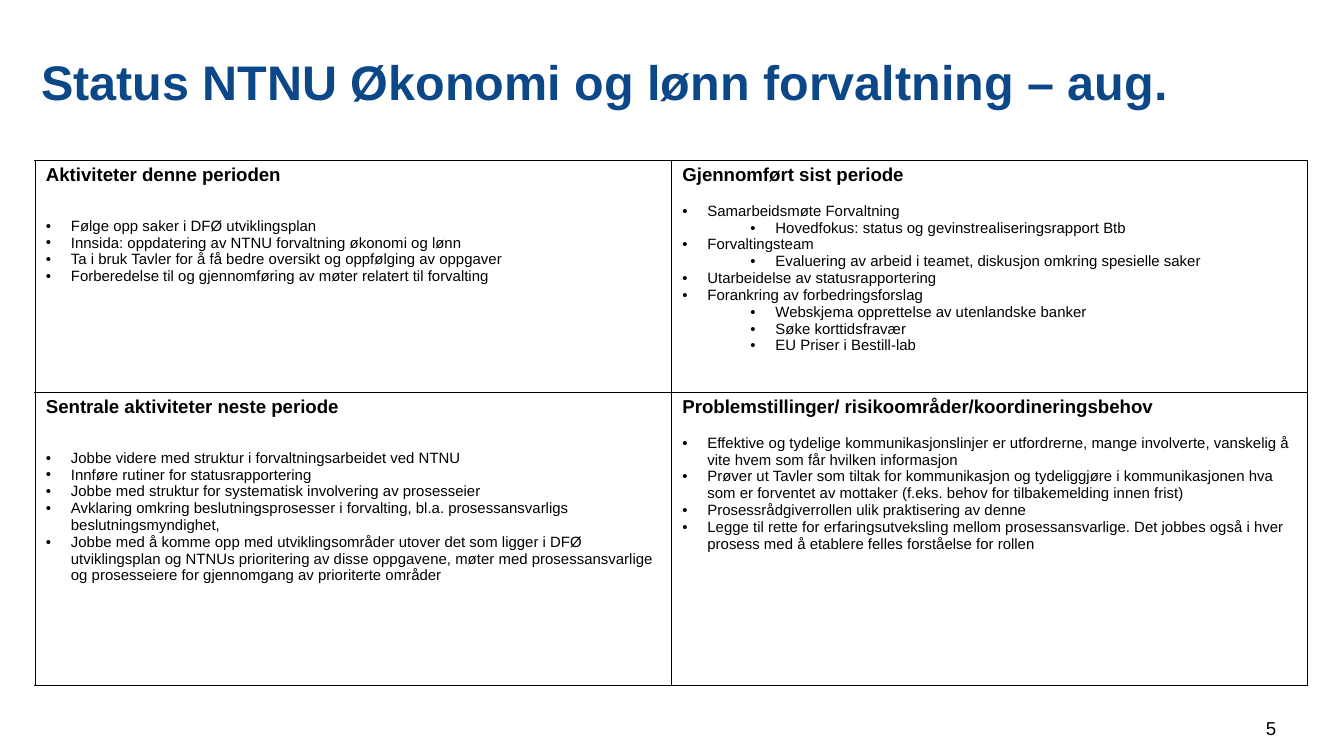
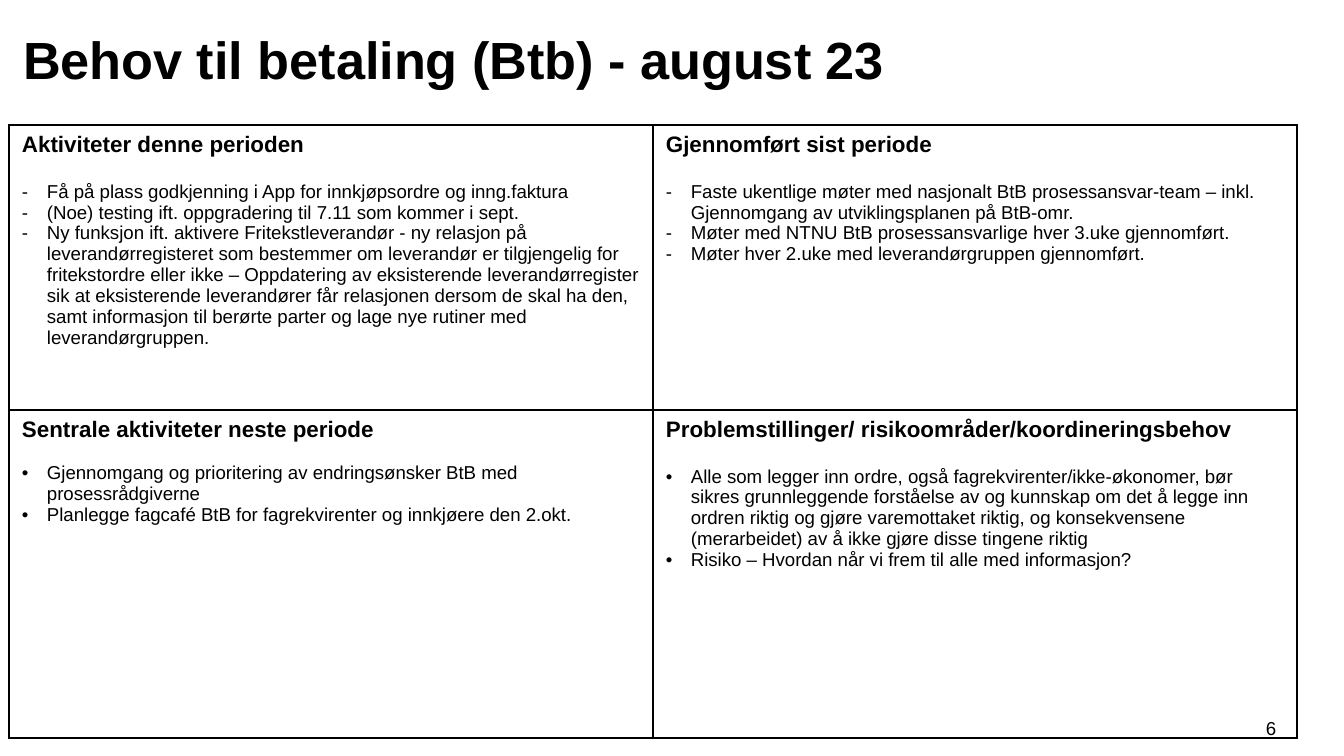
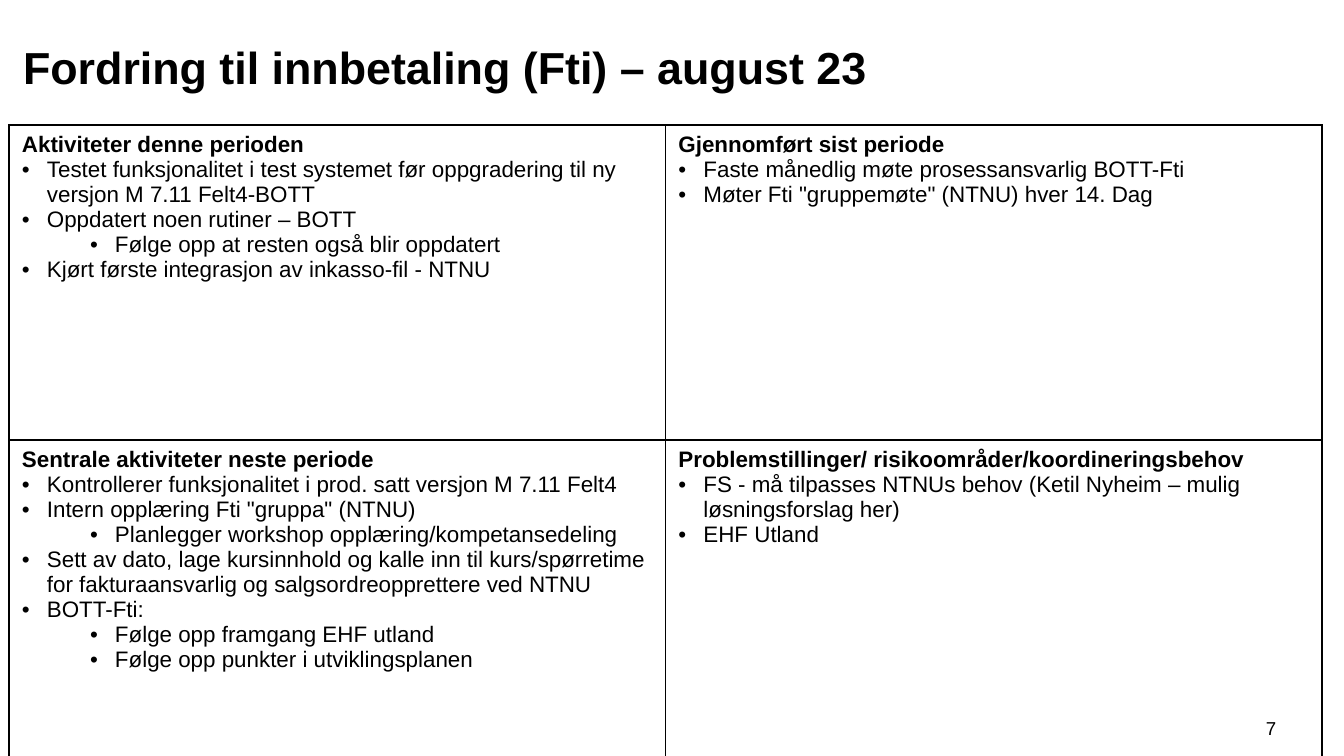
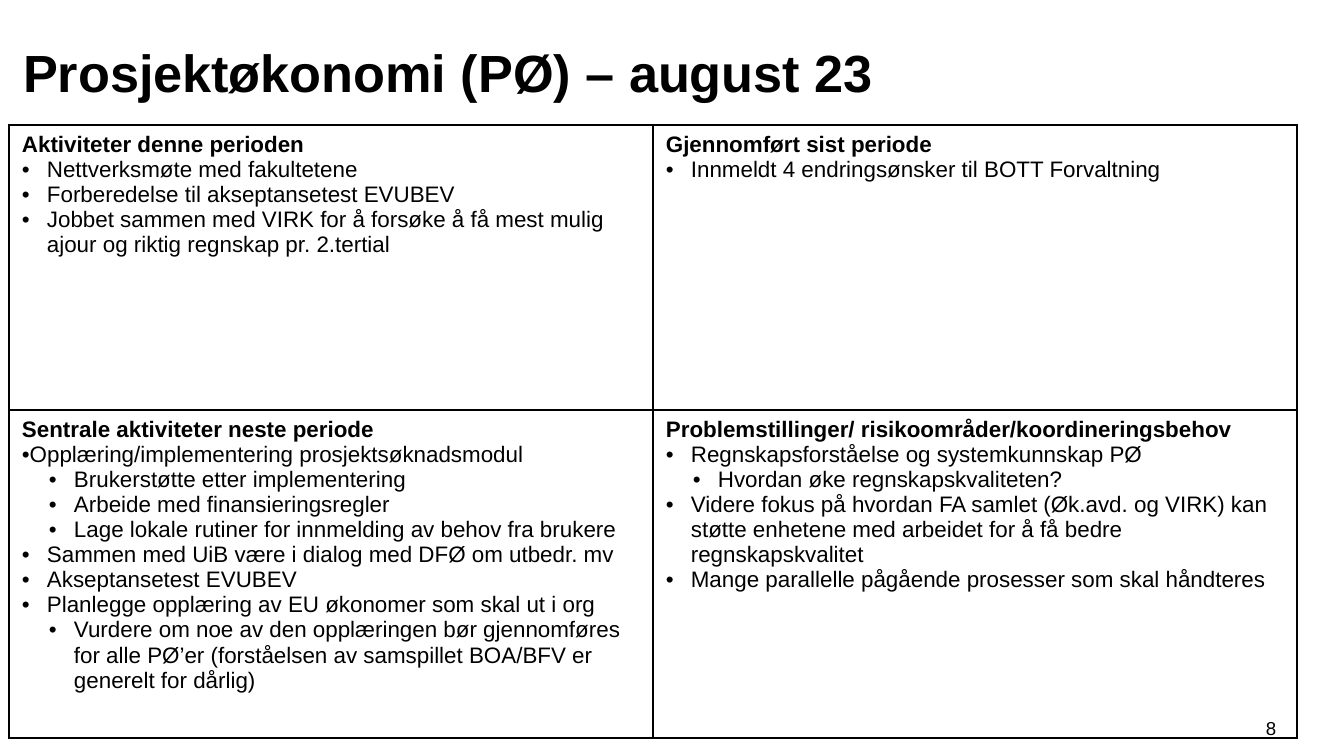
"""Build four monthly status slides, each a title over a two-by-two table."""
from lxml.etree import SubElement
from pptx import Presentation
from pptx.dml.color import RGBColor
from pptx.enum.text import MSO_ANCHOR, MSO_AUTO_SIZE, PP_ALIGN
from pptx.oxml.ns import qn
from pptx.util import Emu, Pt

FONT = "Arial"
BLACK = RGBColor(0x00, 0x00, 0x00)
BLUE = RGBColor(0x0C, 0x47, 0x88)
SLIDE_SIZE = (1344, 756)
NUMBER_BOX = (1246, 708, 50, 40)
FIRST_NUMBER = 5
TITLE_INSETS = (13, 9, 13, 7)
HANGING = 25
MAIN, SUB, FLUSH = "main", "sub", "flush"

HEADINGS = (
    "Aktiviteter denne perioden",
    "Gjennomført sist periode",
    "Sentrale aktiviteter neste periode",
    "Problemstillinger/ risikoområder/koordineringsbehov",
)

WIDE = {
    "title_color": BLACK, "title_spacing": 1.0, "border": 1.0, "insets": (13, 7),
    "heading_size": 12, "body_size": 12, "bullets": "••••",
    "gaps": (0, 0, 0, 0), "sub_indent": 93,
    "table": (9, 125, 1288), "rows": (285, 328),
}

SLIDES = (
    WIDE | {
        "title": "Status NTNU Økonomi og lønn forvaltning – aug.",
        "title_box": (28, 50, 1273, 91), "title_size": 26,
        "title_color": BLUE, "title_spacing": 0.9,
        "table": (35, 160, 1273), "rows": (232, 294),
        "border": 0.6, "insets": (11, 5),
        "heading_size": 10, "body_size": 8, "gaps": (17, 9, 17, 9),
        "cells": (
            (
                (MAIN, "Følge opp saker i DFØ utviklingsplan"),
                (MAIN, "Innsida: oppdatering av NTNU forvaltning økonomi og lønn"),
                (MAIN, "Ta i bruk Tavler for å få bedre oversikt og oppfølging av oppgaver"),
                (MAIN, "Forberedelse til og gjennomføring av møter relatert til forvalting"),
            ),
            (
                (MAIN, "Samarbeidsmøte Forvaltning"),
                (SUB, "Hovedfokus: status og gevinstrealiseringsrapport Btb"),
                (MAIN, "Forvaltingsteam"),
                (SUB, "Evaluering av arbeid i teamet, diskusjon omkring spesielle saker"),
                (MAIN, "Utarbeidelse av statusrapportering"),
                (MAIN, "Forankring av forbedringsforslag"),
                (SUB, "Webskjema opprettelse av utenlandske banker"),
                (SUB, "Søke korttidsfravær"),
                (SUB, "EU Priser i Bestill-lab"),
            ),
            (
                (MAIN, "Jobbe videre med struktur i forvaltningsarbeidet ved NTNU"),
                (MAIN, "Innføre rutiner for statusrapportering"),
                (MAIN, "Jobbe med struktur for systematisk involvering av prosesseier"),
                (MAIN, "Avklaring omkring beslutningsprosesser i forvalting, "
                       "bl.a. prosessansvarligs beslutningsmyndighet,"),
                (MAIN, "Jobbe med å komme opp med utviklingsområder utover det som ligger i DFØ "
                       "utviklingsplan og NTNUs prioritering av disse oppgavene, møter med "
                       "prosessansvarlige og prosesseiere for gjennomgang av prioriterte områder"),
            ),
            (
                (MAIN, "Effektive og tydelige kommunikasjonslinjer er utfordrerne, mange "
                       "involverte, vanskelig å vite hvem som får hvilken informasjon"),
                (MAIN, "Prøver ut Tavler som tiltak for kommunikasjon og tydeliggjøre i "
                       "kommunikasjonen hva som er forventet av mottaker (f.eks. behov for "
                       "tilbakemelding innen frist)"),
                (MAIN, "Prosessrådgiverrollen ulik praktisering av denne"),
                (MAIN, "Legge til rette for erfaringsutveksling mellom prosessansvarlige. Det "
                       "jobbes også i hver prosess med å etablere felles forståelse for rollen"),
            ),
        ),
    },
    WIDE | {
        "title": "Behov til betaling (Btb) - august 23",
        "title_box": (10, 18, 1232, 158), "title_size": 28,
        "body_size": 10, "bullets": "--••", "gaps": (13, 13, 11, 13),
        "cells": (
            (
                (MAIN, "Få på plass godkjenning i App for innkjøpsordre og inng.faktura"),
                (MAIN, "(Noe) testing ift. oppgradering til 7.11 som kommer i sept."),
                (MAIN, "Ny funksjon ift. aktivere Fritekstleverandør - ny relasjon på "
                       "leverandørregisteret som bestemmer om leverandør er tilgjengelig for "
                       "fritekstordre eller ikke – Oppdatering av eksisterende "
                       "leverandørregister sik at eksisterende leverandører får relasjonen "
                       "dersom de skal ha den, samt informasjon til berørte parter og lage nye "
                       "rutiner med leverandørgruppen."),
            ),
            (
                (MAIN, "Faste ukentlige møter med nasjonalt BtB prosessansvar-team – inkl. "
                       "Gjennomgang av utviklingsplanen på BtB-omr."),
                (MAIN, "Møter med NTNU BtB prosessansvarlige hver 3.uke gjennomført."),
                (MAIN, "Møter hver 2.uke med leverandørgruppen gjennomført."),
            ),
            (
                (MAIN, "Gjennomgang og prioritering av endringsønsker BtB med "
                       "prosessrådgiverne"),
                (MAIN, "Planlegge fagcafé BtB for fagrekvirenter og innkjøere den 2.okt."),
            ),
            (
                (MAIN, "Alle som legger inn ordre, også fagrekvirenter/ikke-økonomer, bør "
                       "sikres grunnleggende forståelse av og kunnskap om det å legge inn "
                       "ordren riktig og gjøre varemottaket riktig, og konsekvensene "
                       "(merarbeidet) av å ikke gjøre disse tingene riktig"),
                (MAIN, "Risiko – Hvordan når vi frem til alle med informasjon?"),
            ),
        ),
    },
    WIDE | {
        "title": "Fordring til innbetaling (Fti) – august 23",
        "title_box": (10, 31, 1232, 67), "title_size": 24,
        "table": (9, 125, 1313), "rows": (315, 357),
        "cells": (
            (
                (MAIN, "Testet funksjonalitet i test systemet før oppgradering til ny "
                       "versjon M 7.11 Felt4-BOTT"),
                (MAIN, "Oppdatert noen rutiner – BOTT"),
                (SUB, "Følge opp at resten også blir oppdatert"),
                (MAIN, "Kjørt første integrasjon av inkasso-fil - NTNU"),
            ),
            (
                (MAIN, "Faste månedlig møte prosessansvarlig BOTT-Fti"),
                (MAIN, 'Møter Fti "gruppemøte" (NTNU) hver 14. Dag'),
            ),
            (
                (MAIN, "Kontrollerer funksjonalitet i prod. satt versjon M 7.11 Felt4"),
                (MAIN, 'Intern opplæring Fti "gruppa" (NTNU)'),
                (SUB, "Planlegger workshop opplæring/kompetansedeling"),
                (MAIN, "Sett av dato, lage kursinnhold og kalle inn til kurs/spørretime for "
                       "fakturaansvarlig og salgsordreopprettere ved NTNU"),
                (MAIN, "BOTT-Fti:"),
                (SUB, "Følge opp framgang EHF utland"),
                (SUB, "Følge opp punkter i utviklingsplanen"),
            ),
            (
                (MAIN, "FS - må tilpasses NTNUs behov (Ketil Nyheim – mulig "
                       "løsningsforslag her)"),
                (MAIN, "EHF Utland"),
            ),
        ),
    },
    WIDE | {
        "title": "Prosjektøkonomi (PØ) – august 23",
        "title_box": (10, 31, 1232, 77), "title_size": 28, "sub_indent": 52,
        "cells": (
            (
                (MAIN, "Nettverksmøte med fakultetene"),
                (MAIN, "Forberedelse til akseptansetest EVUBEV"),
                (MAIN, "Jobbet sammen med VIRK for å forsøke å få mest mulig ajour og "
                       "riktig regnskap pr. 2.tertial"),
            ),
            (
                (MAIN, "Innmeldt 4 endringsønsker til BOTT Forvaltning"),
            ),
            (
                (FLUSH, "Opplæring/implementering prosjektsøknadsmodul"),
                (SUB, "Brukerstøtte etter implementering"),
                (SUB, "Arbeide med finansieringsregler"),
                (SUB, "Lage lokale rutiner for innmelding av behov fra brukere"),
                (MAIN, "Sammen med UiB være i dialog med DFØ om utbedr. mv"),
                (MAIN, "Akseptansetest EVUBEV"),
                (MAIN, "Planlegge opplæring av EU økonomer som skal ut i org"),
                (SUB, "Vurdere om noe av den opplæringen bør gjennomføres for alle PØ’er "
                      "(forståelsen av samspillet BOA/BFV er generelt for dårlig)"),
            ),
            (
                (MAIN, "Regnskapsforståelse og systemkunnskap PØ"),
                (SUB, "Hvordan øke regnskapskvaliteten?"),
                (MAIN, "Videre fokus på hvordan FA samlet (Øk.avd. og VIRK) kan støtte "
                       "enhetene med arbeidet for å få bedre regnskapskvalitet"),
                (MAIN, "Mange parallelle pågående prosesser som skal håndteres"),
            ),
        ),
    },
)


def px(length):
    return Emu(round(length * 914400 / 134.4))


def add_text(paragraph, text, size, color=BLACK, bold=False):
    run = paragraph.add_run()
    run.text = text
    run.font.name = FONT
    run.font.size = Pt(size)
    run.font.bold = bold
    run.font.color.rgb = color


def set_insets(frame, insets):
    (frame.margin_left, frame.margin_top,
     frame.margin_right, frame.margin_bottom) = map(px, insets)


def add_title(slide, content):
    title = slide.shapes.title
    title.left, title.top, title.width, title.height = map(px, content["title_box"])
    frame = title.text_frame
    frame.auto_size = MSO_AUTO_SIZE.NONE
    frame.vertical_anchor = MSO_ANCHOR.TOP
    frame.word_wrap = True
    set_insets(frame, TITLE_INSETS)
    heading = frame.paragraphs[0]
    heading.alignment = PP_ALIGN.LEFT
    heading.line_spacing = content["title_spacing"]
    heading.space_before = Pt(0)
    add_text(heading, content["title"], content["title_size"], content["title_color"], True)


def add_number(slide, number):
    frame = slide.shapes.add_textbox(*map(px, NUMBER_BOX)).text_frame
    frame.word_wrap = True
    frame.vertical_anchor = MSO_ANCHOR.MIDDLE
    set_insets(frame, (0, 0, 0, 0))
    frame.paragraphs[0].alignment = PP_ALIGN.CENTER
    add_text(frame.paragraphs[0], str(number), 10)


def set_borders(cell, width):
    properties = cell._tc.get_or_add_tcPr()
    for side in ("a:lnL", "a:lnR", "a:lnT", "a:lnB"):
        line = SubElement(properties, qn(side), w=str(Pt(width)))
        fill = SubElement(line, qn("a:solidFill"))
        SubElement(fill, qn("a:srgbClr"), val=str(BLACK))


def add_bullet(paragraph, bullet, kind, sub_indent):
    left, hanging = {MAIN: (HANGING, HANGING), SUB: (sub_indent, HANGING), FLUSH: (0, 0)}[kind]
    paragraph.level = int(kind == SUB)
    properties = paragraph._p.get_or_add_pPr()
    properties.set("marL", str(px(left)))
    properties.set("indent", str(px(-hanging)))
    SubElement(properties, qn("a:buFont"), typeface=FONT)
    SubElement(properties, qn("a:buChar"), char=bullet)


def fill_cell(cell, index, content):
    set_borders(cell, content["border"])
    cell.fill.background()
    cell.vertical_anchor = MSO_ANCHOR.TOP
    set_insets(cell, content["insets"] * 2)
    frame = cell.text_frame
    add_text(frame.paragraphs[0], HEADINGS[index], content["heading_size"], bold=True)
    gap = content["gaps"][index]
    for kind, text in content["cells"][index]:
        item = frame.add_paragraph()
        add_bullet(item, content["bullets"][index], kind, content["sub_indent"])
        item.space_before = Pt(gap)
        add_text(item, text, content["body_size"])
        gap = 0


def add_status_table(slide, content):
    left, top, width = content["table"]
    rows = content["rows"]
    table = slide.shapes.add_table(2, 2, *map(px, (left, top, width, sum(rows)))).table
    table.first_row = table.horz_banding = False
    for row, height in zip(table.rows, rows):
        row.height = px(height)
    for column in table.columns:
        column.width = px(width / 2)
    for index, cell in enumerate(table.iter_cells()):
        fill_cell(cell, index, content)


def main():
    deck = Presentation()
    deck.slide_width, deck.slide_height = map(px, SLIDE_SIZE)
    for number, content in enumerate(SLIDES, FIRST_NUMBER):
        slide = deck.slides.add_slide(deck.slide_layouts[5])
        add_number(slide, number)
        add_title(slide, content)
        add_status_table(slide, content)
    deck.save("out.pptx")


if __name__ == "__main__":
    main()
